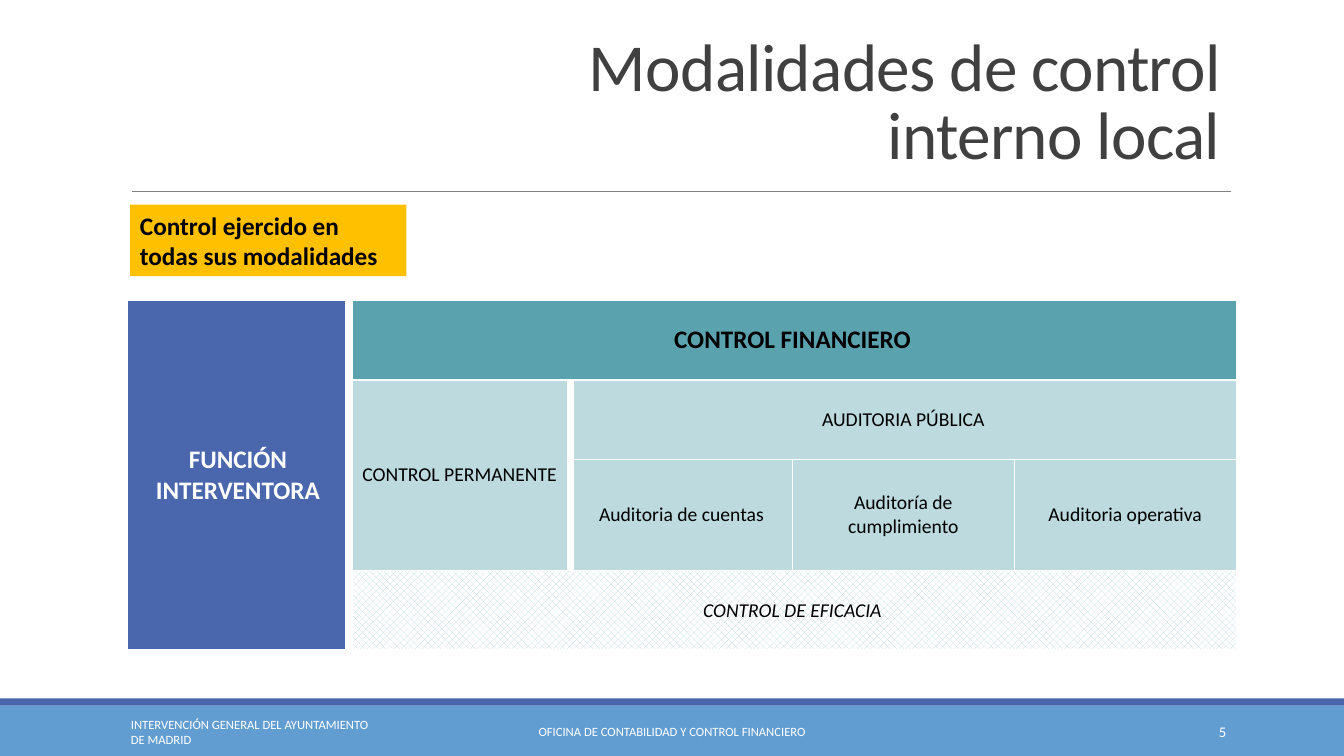
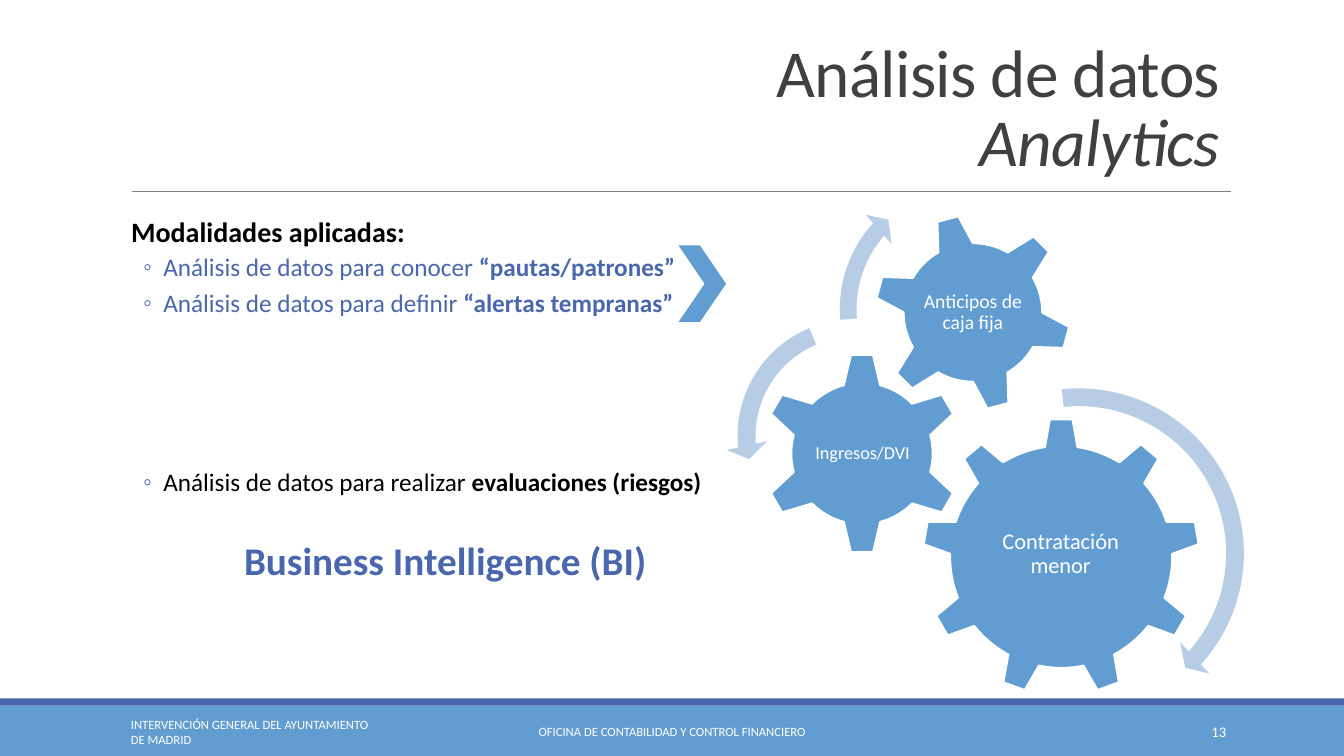
import pptx
import pptx.dml.color
import pptx.enum.dml
import pptx.enum.shapes
import pptx.enum.text
import pptx.oxml.ns
import pptx.util
from dataclasses import dataclass
from lxml import etree

Inches = pptx.util.Inches
Pt = pptx.util.Pt
SHAPE = pptx.enum.shapes.MSO_SHAPE
ALIGN = pptx.enum.text.PP_ALIGN
ANCHOR = pptx.enum.text.MSO_ANCHOR
qn = pptx.oxml.ns.qn


@dataclass(frozen=True)
class Theme:
    font: str = "Calibri"
    white: str = "FFFFFF"
    black: str = "000000"
    dark: str = "404040"
    gray: str = "808080"
    navy: str = "4A66AC"
    sky: str = "629DD1"
    pale: str = "B7CCE5"
    teal: str = "5AA2AE"
    mist: str = "BDDADF"
    gold: str = "FFC000"
    title: float = 48
    large: float = 28
    lead: float = 20
    body: float = 18
    cell: float = 14
    page: float = 10.5
    foot: float = 9


T = Theme()

FEET = [
    ("INTERVENCIÓN GENERAL DEL AYUNTAMIENTO DE MADRID", (1.2, 7.06, 2.7, 0.4), ALIGN.LEFT),
    ("OFICINA DE CONTABILIDAD Y CONTROL FINANCIERO", (4.03, 7.06, 5.27, 0.4), ALIGN.CENTER),
]
BANDS = [((0, 7, 13.33, 0.5), T.sky), ((0, 6.93, 13.33, 0.07), T.navy)]
TITLE = (4.65, 0.31, 7.55, 1.59)

ROWS = [0.79, 0.79, 1.1, 0.79]
COLS = [2.2] * 5
HEAD = dict(size=T.body, bold=True)
CELLS = [
    (0, 0, 4, 1, "FUNCIÓN INTERVENTORA", T.navy, dict(HEAD, color=T.white)),
    (0, 1, 1, 4, "CONTROL FINANCIERO", T.teal, HEAD),
    (1, 1, 2, 1, "CONTROL PERMANENTE", T.mist, {}),
    (1, 2, 1, 3, "AUDITORIA PÚBLICA", T.mist, {}),
    (2, 2, 1, 1, "Auditoria de cuentas", T.mist, {}),
    (2, 3, 1, 1, "Auditoría de cumplimiento", T.mist, {}),
    (2, 4, 1, 1, "Auditoria operativa", T.mist, {}),
    (3, 1, 1, 4, "CONTROL DE EFICACIA", None, dict(italic=True)),
]
WIDE = {(row, 1) for row in range(4)} | {(1, 2), (2, 2)}

BLUE = dict(size=T.body, color=T.navy)
PLAIN = dict(size=T.body)
LIST = [
    (0, 0.1, 0, 0, 2, [("Modalidades aplicadas:", dict(size=T.lead, bold=True))]),
    (1, 0.42, -0.2, 2, 4, [("Análisis de datos para conocer ", BLUE),
                           ("“pautas/patrones”", dict(BLUE, bold=True))]),
    (1, 0.42, -0.2, 2, 4, [("Análisis de datos para definir ", BLUE),
                           ("“alertas tempranas”", dict(BLUE, bold=True))]),
    (1, 0.42, -0.2, 105, 4, [("Análisis de datos para realizar ", PLAIN),
                             ("evaluaciones (riesgos)", dict(PLAIN, bold=True))]),
    (1, 1.22, 0, 28, 4, [("Business Intelligence (BI)",
                          dict(size=T.large, color=T.navy, bold=True))]),
]
GEARS = [
    (SHAPE.GEAR_9, (9.15, 4.15, 2.75, 2.75), 0, "Contratación menor", (9.7, 4.79, 1.64, 1.41), 16),
    (SHAPE.GEAR_6, (7.55, 3.5, 2, 2), 0, "Ingresos/DVI", (8.06, 4, 0.99, 0.99), 13),
    (SHAPE.GEAR_6, (8.67, 2.12, 1.96, 1.96), 345, "Anticipos de caja fija", (9.1, 2.55, 1.1, 1.1), 14),
]
ARROWS = [
    (SHAPE.CIRCULAR_ARROW, (8.94, 3.73, 3.52, 3.52), (0.05, 2.99, 25.24, 158.44, 0.06)),
    (SHAPE.LEFT_CIRCULAR_ARROW, (7.2, 3.05, 2.55, 2.55), (0.07, 4.3, 104.89, 148.38, 0.08)),
    (SHAPE.CIRCULAR_ARROW, (8.22, 1.69, 2.75, 2.75), (0.06, 3.94, 133.14, 105.08, 0.07)),
]


def rgb(code):
    return pptx.dml.color.RGBColor.from_string(code)


def place(box):
    return [Inches(n) for n in box]


def write(para, runs, align=ALIGN.LEFT, space=None):
    para.alignment = align
    if space:
        para.line_spacing = space
    for text, style in runs:
        if text == "\n":
            para.add_line_break()
            continue
        run = para.add_run()
        run.text = text
        font = run.font
        font.name = T.font
        font.size = Pt(style.get("size", T.cell))
        font.bold = style.get("bold", False)
        font.italic = style.get("italic", False)
        font.color.rgb = rgb(style.get("color", T.black))
        if "track" in style:
            run._r.get_or_add_rPr().set("spc", str(style["track"]))


def label(slide, box, runs, align=ALIGN.LEFT, space=None, inset=None):
    item = slide.shapes.add_textbox(*place(box))
    frame = item.text_frame
    frame.word_wrap = True
    frame.vertical_anchor = ANCHOR.MIDDLE
    if inset is not None:
        frame.margin_left = frame.margin_right = Inches(inset)
        frame.margin_top = frame.margin_bottom = Inches(inset)
    write(frame.paragraphs[0], runs, align, space)
    return item


def draw(slide, kind, box, fill, edge=None, adjust=(), turn=0):
    item = slide.shapes.add_shape(kind, *place(box))
    item.shadow.inherit = False
    item.fill.solid()
    item.fill.fore_color.rgb = rgb(fill)
    if edge:
        item.line.color.rgb = rgb(T.white)
        item.line.width = Pt(edge)
    else:
        item.line.fill.background()
    for spot, value in enumerate(adjust):
        item.adjustments[spot] = value
    item.rotation = turn
    return item


def share(deck, slide):
    parts = [draw(slide, SHAPE.RECTANGLE, box, fill) for box, fill in BANDS]
    rule = slide.shapes.add_connector(
        pptx.enum.shapes.MSO_CONNECTOR.STRAIGHT, *place((1.31, 1.9, 12.21, 1.9)))
    rule.line.color.rgb = rgb(T.gray)
    rule.line.width = Pt(0.5)
    etree.SubElement(rule.element.spPr, qn("a:effectLst"))
    parts.append(rule)
    for text, box, align in FEET:
        parts.append(label(slide, box, [(text, dict(size=T.foot, color=T.white))], align))
    tree = deck.slide_master.shapes.element
    for spot, part in enumerate(parts):
        part.element.xpath(".//p:cNvPr")[0].set("id", str(100 + spot))
        tree.insert(2 + spot, part.element)


def start(slide, page, runs, anchor):
    title = slide.shapes.title
    title.left, title.top, title.width, title.height = place(TITLE)
    frame = title.text_frame
    frame.word_wrap = True
    frame.auto_size = pptx.enum.text.MSO_AUTO_SIZE.NONE
    frame.vertical_anchor = anchor
    base = dict(size=T.title, color=T.dark, track=-50)
    write(frame.paragraphs[0], [(text, dict(base, **more)) for text, more in runs],
          ALIGN.RIGHT, 0.85)
    label(slide, (10.83, 7.06, 1.43, 0.4),
          [(page, dict(size=T.page, color=T.white))], ALIGN.RIGHT)


def border(cell, row, col):
    props = cell._tc.get_or_add_tcPr()
    wide = {"lnL": (row, col) in WIDE, "lnR": (row, col + 1) in WIDE}
    for spot, side in enumerate(("lnL", "lnR", "lnT", "lnB")):
        line = etree.Element(qn("a:" + side), w=str(Pt(6 if wide.get(side) else 1)))
        fill = etree.SubElement(line, qn("a:solidFill"))
        etree.SubElement(fill, qn("a:srgbClr"), val=T.white)
        props.insert(spot, line)


def grid(slide):
    box = (1.26, 2.98, sum(COLS), sum(ROWS))
    table = slide.shapes.add_table(len(ROWS), len(COLS), *place(box)).table
    for row, size in zip(table.rows, ROWS):
        row.height = Inches(size)
    for col, size in zip(table.columns, COLS):
        col.width = Inches(size)
    for row, col, down, wide, text, fill, style in CELLS:
        cell = table.cell(row, col)
        if down * wide > 1:
            cell.merge(table.cell(row + down - 1, col + wide - 1))
        cell.vertical_anchor = ANCHOR.MIDDLE
        write(cell.text_frame.paragraphs[0], [(text, style)], ALIGN.CENTER)
        if fill:
            cell.fill.solid()
        else:
            cell.fill.patterned()
            cell.fill.pattern = pptx.enum.dml.MSO_PATTERN.PERCENT_50
            cell.fill.back_color.rgb = rgb(T.white)
        cell.fill.fore_color.rgb = rgb(fill or T.mist)
    for row in range(len(ROWS)):
        for col in range(len(COLS)):
            border(table.cell(row, col), row, col)


def points(slide):
    body = slide.placeholders[1]
    body.left, body.top, body.width, body.height = place((1.2, 2.12, 11, 4.3))
    frame = body.text_frame
    frame.auto_size = pptx.enum.text.MSO_AUTO_SIZE.NONE
    frame.margin_left = frame.margin_right = 0
    for spot, (level, left, hang, before, after, runs) in enumerate(LIST):
        para = frame.add_paragraph() if spot else frame.paragraphs[0]
        para.level = level
        props = para._p.get_or_add_pPr()
        props.set("marL", str(Inches(left)))
        props.set("indent", str(Inches(hang)))
        if hang:
            tint = etree.SubElement(props, qn("a:buClr"))
            etree.SubElement(tint, qn("a:srgbClr"), val=T.navy)
            etree.SubElement(props, qn("a:buChar"), char="◦")
        else:
            etree.SubElement(props, qn("a:buNone"))
        para.space_before = Pt(before)
        para.space_after = Pt(after)
        write(para, runs, space=0.9)


def modes(slide):
    start(slide, "5", [("Modalidades de control interno local", {})], ANCHOR.TOP)
    grid(slide)
    tag = draw(slide, SHAPE.RECTANGLE, (1.29, 2.03, 2.74, 0.71), T.gold)
    tag.text_frame.word_wrap = True
    write(tag.text_frame.paragraphs[0], [("Control ejercido en todas sus modalidades", HEAD)])


def data(slide):
    start(slide, "13", [("Análisis de datos", {}), ("\n", {}), ("Analytics", dict(italic=True))],
          ANCHOR.MIDDLE)
    points(slide)
    for kind, box, turn, text, area, size in GEARS:
        draw(slide, kind, box, T.sky, 1.25, turn=turn)
        label(slide, area, [(text, dict(size=size, color=T.white))], ALIGN.CENTER, 0.9, 0.02)
    for kind, box, adjust in ARROWS:
        draw(slide, kind, box, T.pale, adjust=adjust)
    draw(slide, SHAPE.CHEVRON, (6.7, 2.42, 0.52, 0.79), T.sky, 2, (0.52,))


def main():
    deck = pptx.Presentation()
    deck.slide_width, deck.slide_height = place((13.33, 7.5))
    first = deck.slides.add_slide(deck.slide_layouts[5])
    share(deck, first)
    modes(first)
    data(deck.slides.add_slide(deck.slide_layouts[1]))
    deck.save("out.pptx")


if __name__ == "__main__":
    main()
